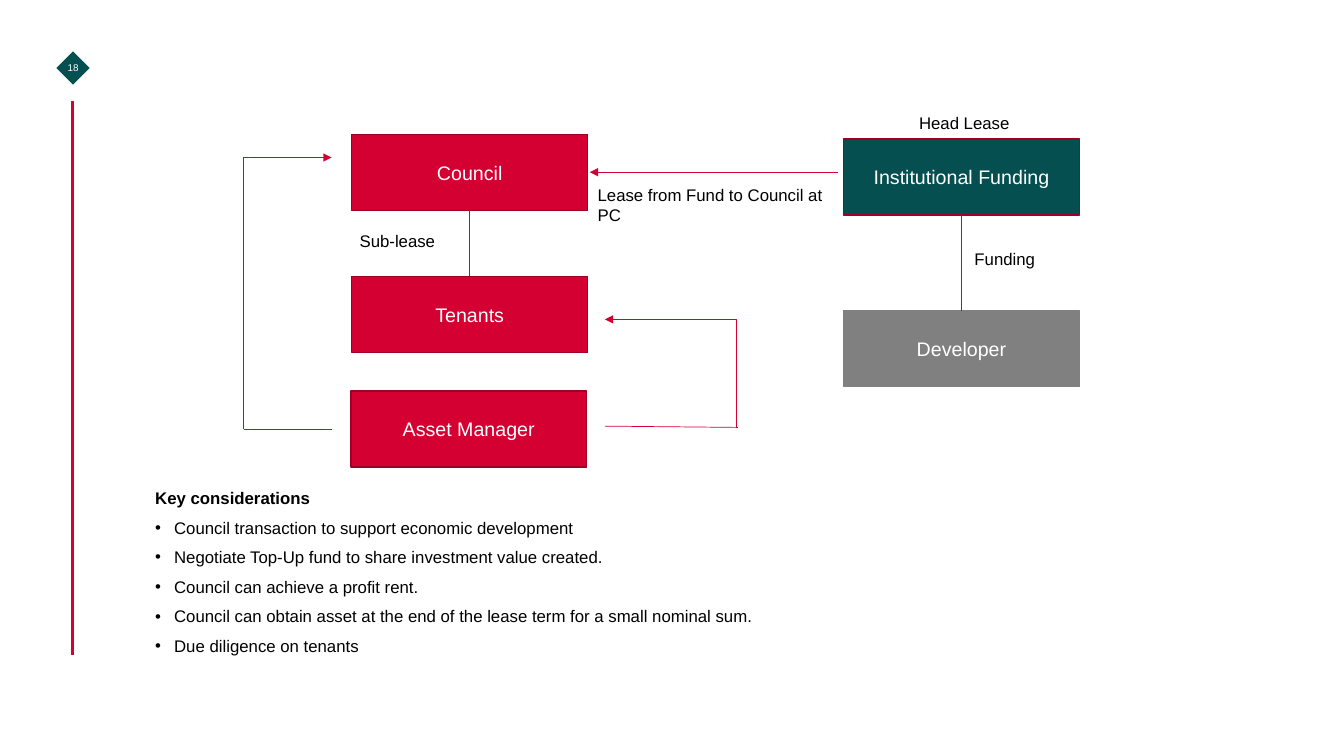
from lxml.etree import SubElement
from pptx import Presentation
from pptx.dml.color import RGBColor
from pptx.enum.shapes import MSO_CONNECTOR as LINE, MSO_SHAPE as SHAPE
from pptx.enum.text import MSO_ANCHOR as ANCHOR, MSO_AUTO_SIZE as FIT, PP_ALIGN as ALIGN
from pptx.oxml.ns import qn
from pptx.util import Pt

RED = RGBColor(0xD5, 0x00, 0x32)
DARK_RED = RGBColor(0x9E, 0x00, 0x25)
TEAL = RGBColor(0x06, 0x4F, 0x50)
GREY = RGBColor(0x80, 0x80, 0x80)
WHITE = RGBColor(0xFF, 0xFF, 0xFF)
BLACK = RGBColor(0x00, 0x00, 0x00)

BOX_W, BOX_H = 168.5, 54.3
INDENT = 13.5

CONSIDERATIONS = [
    "Council transaction to support economic development",
    "Negotiate Top-Up fund to share investment value created.",
    "Council can achieve a profit rent.",
    "Council can obtain asset at the end of the lease term for a small nominal sum.",
    "Due diligence on tenants",
]


def write(p, text, size=12, color=BLACK, bold=False, align=ALIGN.LEFT):
    p.alignment = align
    r = p.add_run()
    r.text = text
    r.font.name = "Arial"
    r.font.size = Pt(size)
    r.font.bold = bold
    r.font.color.rgb = color


def add_box(s, text, x, y, w=BOX_W, h=BOX_H, kind=SHAPE.RECTANGLE,
            fill=RED, line=DARK_RED, size=14):
    sp = s.shapes.add_shape(kind, Pt(x), Pt(y), Pt(w), Pt(h))
    sp.shadow.inherit = False
    sp.fill.solid()
    sp.fill.fore_color.rgb = fill
    if line is None:
        sp.line.fill.background()
    else:
        sp.line.color.rgb = line
        sp.line.width = Pt(1)
    tf = sp.text_frame
    tf.vertical_anchor = ANCHOR.MIDDLE
    write(tf.paragraphs[0], text, size=size, color=WHITE, align=ALIGN.CENTER)
    return sp


def add_label(s, text, x, y, w, h=21.6):
    tf = s.shapes.add_textbox(Pt(x), Pt(y), Pt(w), Pt(h)).text_frame
    tf.word_wrap = True
    write(tf.paragraphs[0], text)


def add_line(s, x1, y1, x2, y2, kind=LINE.STRAIGHT, width=0.5, arrow=False,
             bend=None, turn=0):
    c = s.shapes.add_connector(kind, Pt(x1), Pt(y1), Pt(x2), Pt(y2))
    c.line.color.rgb = RED
    c.line.width = Pt(width)
    pr = c._element.spPr
    if arrow:
        SubElement(c.line._get_or_add_ln(), qn("a:tailEnd"), type="triangle")
    SubElement(pr, qn("a:effectLst"))
    if bend is not None:
        guides = pr.find(qn("a:prstGeom")).get_or_add_avLst()
        SubElement(guides, qn("a:gd"), name="adj1", fmla=f"val {round(bend * 100000)}")
    if turn:
        pr.find(qn("a:xfrm")).set("rot", str(turn * 60000))
    return c


def join(s, upper, lower):
    c = add_line(s, 0, 0, 0, 0)
    c.begin_connect(upper, 2)
    c.end_connect(lower, 0)


def fill_list(body, heading, items):
    body.left, body.top, body.width, body.height = Pt(103.7), Pt(344.2), Pt(809.3), Pt(126.7)
    tf = body.text_frame
    tf.auto_size = FIT.NONE
    tf.vertical_anchor = ANCHOR.TOP
    for i, text in enumerate([heading, *items]):
        p = tf.add_paragraph() if i else tf.paragraphs[0]
        p.space_before, p.space_after, p.line_spacing = Pt(0), Pt(6), 1.05
        write(p, text, bold=i == 0)
        pr = p._p.get_or_add_pPr()
        indent = Pt(INDENT) if i else 0
        pr.set("marL", str(indent))
        pr.set("indent", str(-indent))
        if i:
            SubElement(pr, qn("a:buFont"), typeface="Arial")
            SubElement(pr, qn("a:buChar"), char="•")
        else:
            SubElement(pr, qn("a:buNone"))


def main():
    prs = Presentation()
    prs.slide_width, prs.slide_height = Pt(960), Pt(540)
    s = prs.slides.add_slide(prs.slide_layouts[1])
    title = s.shapes.title._element
    title.getparent().remove(title)

    # Side rule and page number
    add_line(s, 51.8, 72, 51.8, 468, width=1.5)
    page = add_box(s, "18", 40.3, 36.7, 23.8, 23.8, kind=SHAPE.DIAMOND,
                   fill=TEAL, line=None, size=7)
    tf = page.text_frame
    tf.margin_left = tf.margin_right = tf.margin_top = tf.margin_bottom = 0
    tf.word_wrap = False

    # Parties
    council = add_box(s, "Council", 251.3, 95.9)
    tenants = add_box(s, "Tenants", 251.3, 197.4)
    add_box(s, "Asset Manager", 250.6, 279.2)
    fund = add_box(s, "Institutional Funding", 602.6, 99.2, fill=TEAL)
    developer = add_box(s, "Developer", 602.6, 222, fill=GREY, line=GREY)

    # Relationship labels
    add_label(s, "Sub-lease", 249.8, 161.3, 151.2)
    add_label(s, "Lease from Fund to Council at PC", 419.8, 128.2, 193.7, 36)
    add_label(s, "Head Lease", 649.4, 77, 100)
    add_label(s, "Funding", 689, 174.2, 100)

    # Links between parties
    join(s, council, tenants)
    join(s, fund, developer)
    add_line(s, 598.3, 123, 421.2, 123, arrow=True)

    # Asset manager to tenants
    add_line(s, 432, 304.4, 527, 305.3)
    add_line(s, 527, 305.3, 432, 228.2, kind=LINE.ELBOW, arrow=True, bend=0.014)

    # Asset manager to council
    add_line(s, 174.2, 306.7, 236.9, 306.7)
    add_line(s, 302.4, 240.7, 108.7, 178, kind=LINE.ELBOW, arrow=True, bend=1, turn=90)

    fill_list(s.placeholders[1], "Key considerations", CONSIDERATIONS)
    prs.save("out.pptx")


if __name__ == "__main__":
    main()
